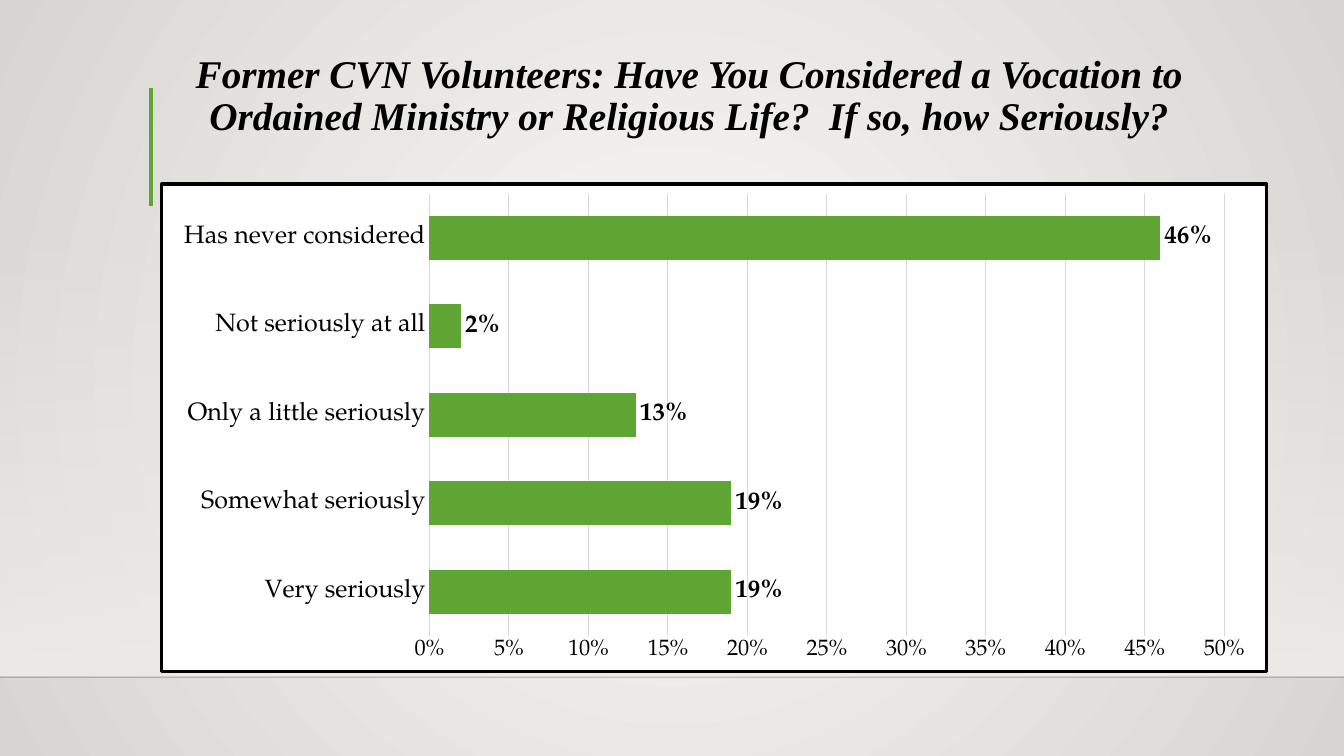
import pptx
import pptx.chart.data
import pptx.dml.color
import pptx.enum.chart
import pptx.enum.shapes
import pptx.enum.text
import pptx.oxml
import pptx.oxml.ns
import pptx.util
from lxml import etree

Pt = pptx.util.Pt
qn = pptx.oxml.ns.qn

BODY_FONT = "TeX Gyre Pagella"
TITLE_FONT = "Times New Roman"
GREEN, GREY, BLACK = "5FA534", "D9D9D9", "000000"
TITLE = ("Former CVN Volunteers: Have You Considered a Vocation to "
         "Ordained Ministry or Religious Life?  If so, how Seriously?")
ANSWERS = {
    "Very seriously": 0.19,
    "Somewhat seriously": 0.19,
    "Only a little seriously": 0.13,
    "Not seriously at all": 0.02,
    "Has never considered": 0.46,
}


def rgb(value):
    return pptx.dml.color.RGBColor.from_string(value)


def set_alpha(parent, percent):
    for color in parent.iter(qn("a:srgbClr")):
        etree.SubElement(color, qn("a:alpha"), val=str(percent * 1000))


def set_gradient(fill, start, end):
    fill.gradient()
    for stop, color in zip(fill.gradient_stops, (start, end)):
        stop.color.rgb = rgb(color)


def set_font(font, size, name=BODY_FONT, bold=False, italic=False):
    font.size, font.name = Pt(size), name
    font.bold, font.italic = bold, italic
    font.color.rgb = rgb(BLACK)


def set_line(line, color, width):
    line.color.rgb = rgb(color)
    line.width = Pt(width)


def add_background(s):
    set_gradient(s.background.fill, "FAFAF9", "D7D5D2")
    grad = next(s.element.iter(qn("a:gradFill")))
    grad.remove(grad.find(qn("a:lin")))
    circle = etree.SubElement(grad, qn("a:path"), {"path": "circle"})
    etree.SubElement(circle, qn("a:fillToRect"),
                     {side: "50000" for side in "ltrb"})


def add_wall(s, x, y, w, h):
    sp = s.shapes.add_shape(pptx.enum.shapes.MSO_SHAPE.RECTANGLE,
                            Pt(x), Pt(y), Pt(w), Pt(h))
    sp.shadow.inherit = False
    sp.line.fill.background()
    set_gradient(sp.fill, "EDEBE7", "EDEBE7")
    sp.fill.gradient_angle = 270
    set_alpha(next(sp.element.iter(qn("a:gs"))), 0)


def add_rule(s, x1, y1, x2, y2, color, width, alpha=100):
    line = s.shapes.add_connector(pptx.enum.shapes.MSO_CONNECTOR.STRAIGHT,
                                  Pt(x1), Pt(y1), Pt(x2), Pt(y2))
    set_line(line.line, color, width)
    sp_pr = line.element.spPr
    if alpha < 100:
        set_alpha(sp_pr, alpha)
    etree.SubElement(sp_pr, qn("a:effectLst"))


def add_title(s, text, x, y, w, h):
    tf = s.shapes.add_textbox(Pt(x), Pt(y), Pt(w), Pt(h)).text_frame
    tf.word_wrap = True
    tf.vertical_anchor = pptx.enum.text.MSO_ANCHOR.BOTTOM
    p = tf.paragraphs[0]
    p.text = text
    p.alignment = pptx.enum.text.PP_ALIGN.CENTER
    p.line_spacing = 0.9
    set_font(p.runs[0].font, 28, TITLE_FONT, bold=True, italic=True)


def set_frame(chart, fill, border, width):
    space = chart.font._element.getparent().getparent().getparent().getparent()
    sp_pr = pptx.oxml.parse_xml(
        f'<c:spPr {pptx.oxml.ns.nsdecls("c", "a")}>'
        f'<a:solidFill><a:srgbClr val="{fill}"/></a:solidFill>'
        f'<a:ln w="{Pt(width)}"><a:solidFill><a:srgbClr val="{border}"/>'
        '</a:solidFill></a:ln></c:spPr>')
    space.find(qn("c:txPr")).addprevious(sp_pr)


def add_bar_chart(s, answers, x, y, w, h):
    data = pptx.chart.data.CategoryChartData(number_format="0%")
    data.categories = list(answers)
    data.add_series("Series 1", list(answers.values()))
    chart = s.shapes.add_chart(
        pptx.enum.chart.XL_CHART_TYPE.BAR_CLUSTERED,
        Pt(x), Pt(y), Pt(w), Pt(h), data).chart
    chart.has_legend = chart.has_title = False
    set_font(chart.font, 10)
    set_frame(chart, "FFFFFF", BLACK, 2.25)

    # Axes
    for axis, size in ((chart.category_axis, 18), (chart.value_axis, 16)):
        axis.major_tick_mark = pptx.enum.chart.XL_TICK_MARK.NONE
        axis.minor_tick_mark = pptx.enum.chart.XL_TICK_MARK.NONE
        set_font(axis.tick_labels.font, size)
    set_line(chart.category_axis.format.line, GREY, 0.75)
    values = chart.value_axis
    values.minimum_scale, values.maximum_scale, values.major_unit = 0, 0.5, 0.05
    values.format.line.fill.background()
    set_line(values.major_gridlines.format.line, GREY, 0.75)
    values.tick_labels.number_format = "0%"
    values.tick_labels.number_format_is_linked = False

    # Bars and their labels
    plot = chart.plots[0]
    plot.gap_width = 100
    plot.vary_by_categories = False
    bars = plot.series[0]
    bars.format.fill.solid()
    bars.format.fill.fore_color.rgb = rgb(GREEN)
    labels = bars.data_labels
    labels.show_value = True
    labels.number_format = "0%"
    labels.number_format_is_linked = False
    labels.position = pptx.enum.chart.XL_LABEL_POSITION.OUTSIDE_END
    set_font(labels.font, 18, bold=True)


def main():
    prs = pptx.Presentation()
    prs.slide_width, prs.slide_height = Pt(960), Pt(540)
    s = prs.slides.add_slide(prs.slide_layouts[6])

    # Backdrop
    add_background(s)
    add_wall(s, 0, 158.4, 960, 324)
    add_rule(s, 0, 483.8, 960, 483.8, "000001", 1, alpha=20)
    add_rule(s, 108, 62.6, 108, 146.9, GREEN, 3)

    # Content
    add_title(s, TITLE, 78.5, 33.1, 827.3, 69.8)
    add_bar_chart(s, ANSWERS, 114.5, 130.3, 791.3, 350.6)
    prs.save("out.pptx")


if __name__ == "__main__":
    main()
